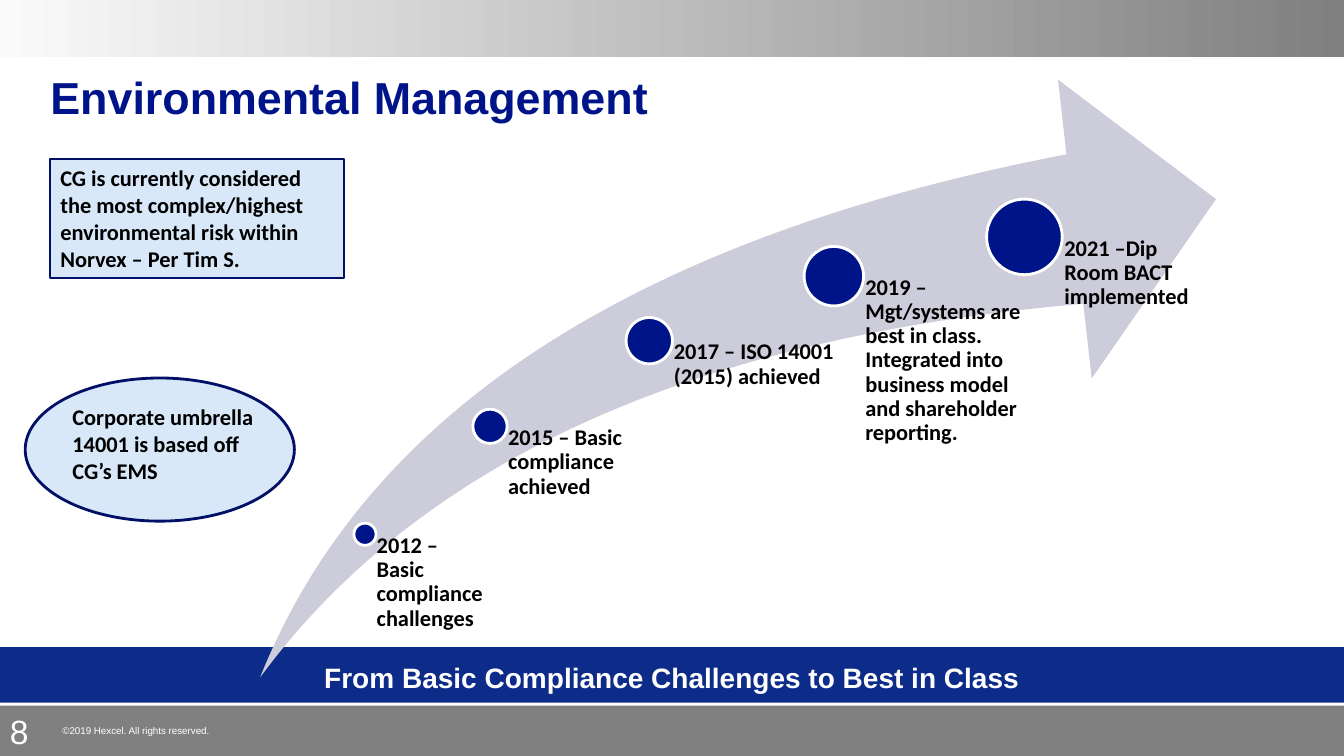
from pptx import Presentation
from pptx.dml.color import RGBColor
from pptx.enum import shapes, text
from pptx.util import Inches, Pt

WHITE = RGBColor(0xFF, 0xFF, 0xFF)
BLACK = RGBColor(0x00, 0x00, 0x00)
PALE_GRAY = RGBColor(0xFA, 0xFA, 0xFA)
GRAY = RGBColor(0x80, 0x80, 0x80)
BANNER_BLUE = RGBColor(0x0D, 0x2B, 0x88)
NAVY = RGBColor(0x00, 0x14, 0x89)
OUTLINE_NAVY = RGBColor(0x00, 0x10, 0x66)
PALE_BLUE = RGBColor(0xD8, 0xE8, 0xF8)
ARROW_GRAY = RGBColor(0xCC, 0xCC, 0xDA)

SHAPE = shapes.MSO_SHAPE
ALIGN = text.PP_ALIGN
ANCHOR = text.MSO_ANCHOR
DEFAULT_INSETS = (0.1, 0.05, 0.1, 0.05)
NO_INSETS = (0, 0, 0, 0)

presentation = Presentation()
presentation.slide_width = Inches(13.33)
presentation.slide_height = Inches(7.5)
slide = presentation.slides.add_slide(presentation.slide_layouts[6])


def add_shape(kind, box, fill, line=None, line_width=1):
    shape = slide.shapes.add_shape(kind, *map(Inches, box))
    shape.shadow.inherit = False
    shape.fill.solid()
    shape.fill.fore_color.rgb = fill
    if line is None:
        shape.line.fill.background()
    else:
        shape.line.color.rgb = line
        shape.line.width = Pt(line_width)
    return shape


def add_text(box, words, size, color=BLACK, font="Calibri", bold=True,
             insets=DEFAULT_INSETS, anchor=ANCHOR.TOP, align=ALIGN.LEFT):
    textbox = slide.shapes.add_textbox(*map(Inches, box))
    frame = textbox.text_frame
    frame.word_wrap = True
    frame.vertical_anchor = anchor
    (frame.margin_left, frame.margin_top,
     frame.margin_right, frame.margin_bottom) = map(Inches, insets)
    paragraph = frame.paragraphs[0]
    paragraph.alignment = align
    run = paragraph.add_run()
    run.text = words
    run.font.name = font
    run.font.size = Pt(size)
    run.font.bold = bold
    run.font.color.rgb = color
    return paragraph


header = add_shape(SHAPE.RECTANGLE, (0, 0, 13.33, 0.57), GRAY)
header.fill.gradient()
header.fill.gradient_angle = 0
for stop, color in zip(header.fill.gradient_stops, (PALE_GRAY, GRAY)):
    stop.color.rgb = color

add_shape(SHAPE.RECTANGLE, (0, 7, 13.33, 0.5), GRAY)
add_text((0, 7, 0.72, 0.5), "8", 24, WHITE, "Arial", bold=False)
add_text((0.52, 7.14, 6.58, 0.22), "©2019 Hexcel. All rights reserved.", 7,
         WHITE, "Arial", bold=False)

add_shape(SHAPE.RECTANGLE, (0, 6.42, 13.33, 0.55), BANNER_BLUE)
add_text((0.5, 0.66, 12.5, 0.57), "Environmental Management", 32, NAVY,
         "Arial", insets=NO_INSETS, anchor=ANCHOR.BOTTOM)
add_text((0, 6.55, 13.33, 0.42),
         "From Basic Compliance Challenges to Best in Class", 20, WHITE,
         "Arial", insets=NO_INSETS, align=ALIGN.CENTER)

arrow = add_shape(SHAPE.SWOOSH_ARROW, (2.58, 0.79, 9.48, 5.93), ARROW_GRAY)
arrow.adjustments[0] = 0.25
arrow.adjustments[1] = 0.25

LABEL_BOTTOM = 6.71
milestones = [
    (3.62, 5.3, 0.22, 1.24, "2012 – Basic compliance challenges"),
    (4.86, 4.23, 0.34, 1.57, "2015 – Basic compliance achieved"),
    (6.44, 3.38, 0.46, 1.83, "2017 – ISO 14001 (2015) achieved"),
    (8.27, 2.74, 0.59, 1.9,
     "2019 – Mgt/systems are best in class. Integrated into business model "
     "and shareholder reporting."),
    (10.16, 2.35, 0.75, 1.9, "2021 –Dip Room BACT implemented"),
]
for center_x, center_y, diameter, label_width, label in milestones:
    radius = diameter / 2
    add_shape(SHAPE.OVAL,
              (center_x - radius, center_y - radius, diameter, diameter),
              NAVY, WHITE, 2)
    paragraph = add_text(
        (center_x, center_y, label_width, LABEL_BOTTOM - center_y),
        label, 16, insets=(diameter * 0.53, 0, 0, 0))
    paragraph.line_spacing = 0.9

risk_box = (0.5, 1.58, 2.91, 1.18)
add_shape(SHAPE.RECTANGLE, risk_box, PALE_BLUE, OUTLINE_NAVY, 1.5)
add_text(risk_box,
         "CG is currently considered the most complex/highest environmental "
         "risk within Norvex – Per Tim S.", 16)

add_shape(SHAPE.OVAL, (0.25, 3.75, 2.67, 1.42), PALE_BLUE, OUTLINE_NAVY, 2)
add_text((0.62, 3.95, 2.16, 0.91),
         "Corporate umbrella 14001 is based off CG’s EMS", 16)

presentation.save("out.pptx")
